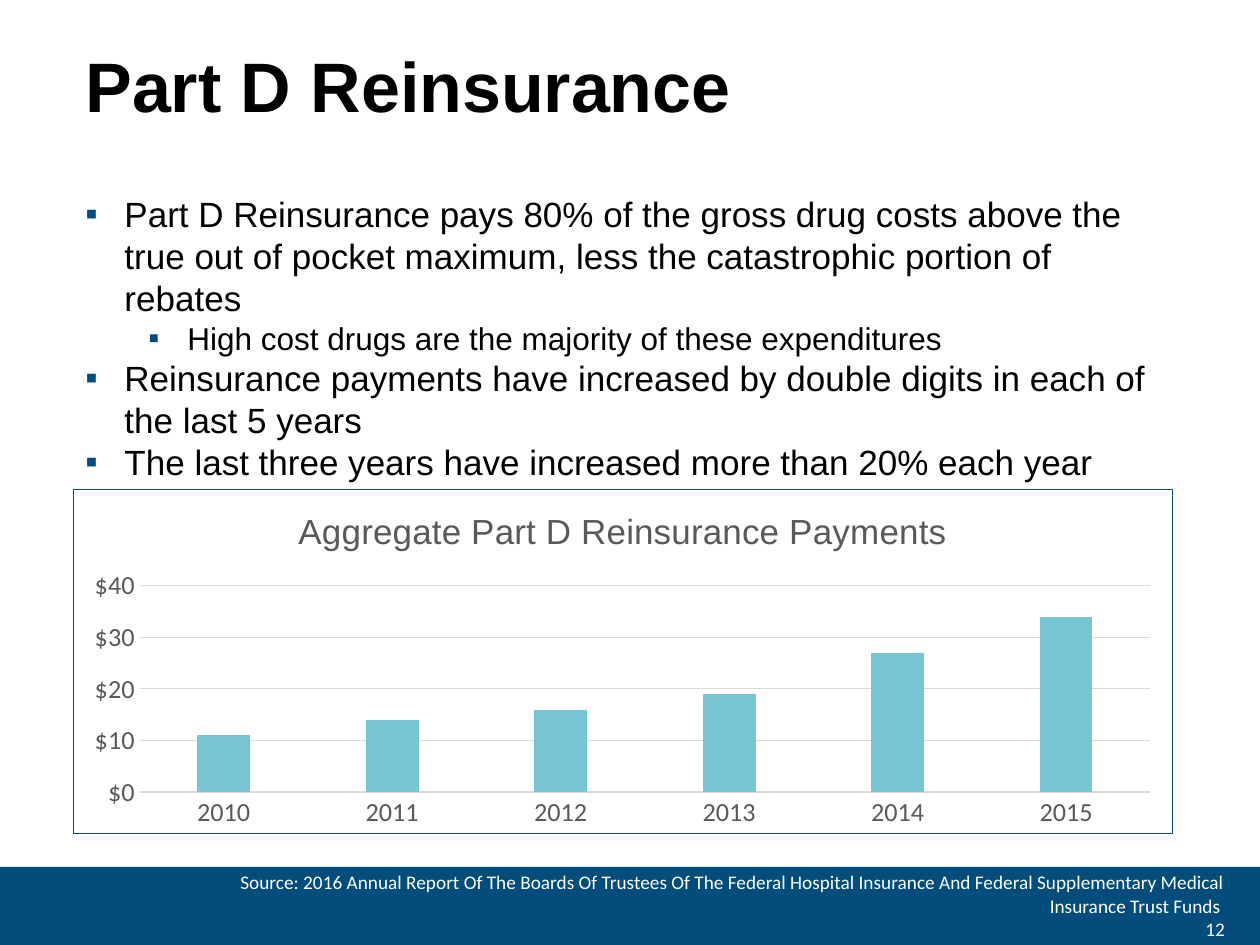
from dataclasses import dataclass

import pptx
import pptx.chart.data
import pptx.dml.color
import pptx.enum.chart
import pptx.enum.shapes
import pptx.enum.text
import pptx.oxml
import pptx.oxml.ns
import pptx.util
from pptx.util import Inches

COLORS = {"navy": "024D7C", "teal": "77C4D5", "black": "000000",
          "white": "FFFFFF", "gray": "595959", "rule": "D9D9D9"}
LEFT, WIDTH = 0.58, 8.73


@dataclass
class Line:
    text: str
    size: float
    level: int = 0


TITLE = [Line("Part D Reinsurance", 40)]
POINTS = [
    Line("Part D Reinsurance pays 80% of the gross drug costs above the true out of pocket "
         "maximum, less the catastrophic portion of rebates", 20),
    Line("High cost drugs are the majority of these expenditures", 18, 1),
    Line("Reinsurance payments have increased by double digits in each of the last 5 years", 20),
    Line("The last three years have increased more than 20% each year", 20),
]
FOOTER = [
    Line("Source: 2016 Annual Report Of The Boards Of Trustees Of The Federal Hospital Insurance "
         "And Federal Supplementary Medical Insurance Trust Funds ", 11),
    Line("12", 11),
]
PAYMENTS = {"2010": 11, "2011": 14, "2012": 16, "2013": 19, "2014": 27, "2015": 34}


def rgb(name: str) -> pptx.dml.color.RGBColor:
    return pptx.dml.color.RGBColor.from_string(COLORS[name])


def style_font(font, face: str, size: float, color: str, bold: bool = False) -> None:
    font.name, font.size, font.bold = face, pptx.util.Pt(size), bold
    font.color.rgb = rgb(color)


def add_bullet(paragraph, level: int) -> None:
    paragraph.level = level
    properties = paragraph._p.get_or_add_pPr()
    properties.set("marL", str(Inches(0.31 + 0.5 * level)))
    properties.set("indent", str(Inches(-0.31)))
    for element in (f'<a:buClr {{}}><a:srgbClr val="{COLORS["navy"]}"/></a:buClr>',
                    '<a:buFont {} typeface="Arial"/>', '<a:buChar {} char="▪"/>'):
        properties.append(pptx.oxml.parse_xml(element.format(pptx.oxml.ns.nsdecls("a"))))


def add_text(slide, box: tuple, lines: list[Line], face: str, color: str, anchor: str = "TOP",
             align: str = "LEFT", spacing: float = 1.0, bold: bool = False,
             bulleted: bool = False) -> None:
    frame = slide.shapes.add_textbox(*map(Inches, box)).text_frame
    frame.word_wrap = True
    frame.vertical_anchor = pptx.enum.text.MSO_ANCHOR[anchor]
    frame.text = "\n".join(line.text for line in lines)
    for paragraph, line in zip(frame.paragraphs, lines):
        paragraph.alignment = pptx.enum.text.PP_ALIGN[align]
        paragraph.line_spacing = spacing
        if bulleted:
            add_bullet(paragraph, line.level)
        style_font(paragraph.runs[0].font, face, line.size, color, bold)


def add_footer_band(slide) -> None:
    band = slide.shapes.add_shape(pptx.enum.shapes.MSO_SHAPE.RECTANGLE,
                                  Inches(0), Inches(6.88), Inches(10), Inches(0.65))
    band.shadow.inherit = False
    band.fill.solid()
    band.fill.fore_color.rgb = rgb("navy")
    band.line.fill.background()


def style_rule(line) -> None:
    line.color.rgb = rgb("rule")
    line.width = pptx.util.Pt(0.75)


def frame_chart(chart) -> None:
    border = pptx.oxml.parse_xml(
        f'<c:spPr {pptx.oxml.ns.nsdecls("c", "a")}><a:noFill/><a:ln w="9525"><a:solidFill>'
        f'<a:srgbClr val="{COLORS["navy"]}"/></a:solidFill></a:ln></c:spPr>')
    chart._chartSpace.chart.addnext(border)
    plot_area = chart._chartSpace.chart.plotArea
    for old in plot_area.findall(pptx.oxml.ns.qn("c:layout")):
        plot_area.remove(old)
    places = {"x": 0.06, "y": 0.28, "w": 0.92, "h": 0.6}
    modes = '<c:layoutTarget val="inner"/><c:xMode val="edge"/><c:yMode val="edge"/>'
    sizes = "".join(f'<c:{key} val="{value}"/>' for key, value in places.items())
    plot_area.insert(0, pptx.oxml.parse_xml(
        f'<c:layout {pptx.oxml.ns.nsdecls("c")}><c:manualLayout>{modes}{sizes}'
        '</c:manualLayout></c:layout>'))


def add_payments_chart(slide) -> None:
    data = pptx.chart.data.CategoryChartData()
    data.categories = list(PAYMENTS)
    data.add_series("Series 1", list(PAYMENTS.values()))
    chart = slide.shapes.add_chart(
        pptx.enum.chart.XL_CHART_TYPE.COLUMN_CLUSTERED,
        Inches(LEFT), Inches(3.88), Inches(WIDTH), Inches(2.74), data).chart
    style_font(chart.font, "Calibri", 10, "black")
    chart.has_legend = False
    chart.has_title = True
    heading = chart.chart_title.text_frame
    heading.text = "Aggregate Part D Reinsurance Payments"
    style_font(heading.paragraphs[0].runs[0].font, "Arial", 20, "gray")
    chart.chart_title.include_in_layout = False

    columns = chart.plots[0]
    columns.gap_width, columns.overlap, columns.vary_by_categories = 219, -27, False
    columns.series[0].format.fill.solid()
    columns.series[0].format.fill.fore_color.rgb = rgb("teal")

    years, dollars = chart.category_axis, chart.value_axis
    for axis in (years, dollars):
        axis.major_tick_mark = axis.minor_tick_mark = pptx.enum.chart.XL_TICK_MARK.NONE
        style_font(axis.tick_labels.font, "Calibri", 15, "gray")
    style_rule(years.format.line)
    dollars.format.line.fill.background()
    style_rule(dollars.major_gridlines.format.line)
    dollars.minimum_scale, dollars.maximum_scale, dollars.major_unit = 0, 40, 10
    dollars.tick_labels.number_format = '"$"#,##0'
    dollars.tick_labels.number_format_is_linked = False
    frame_chart(chart)


def main() -> None:
    deck = pptx.Presentation()
    deck.slide_width, deck.slide_height = Inches(10), Inches(7.5)
    slide = deck.slides.add_slide(deck.slide_layouts[6])
    add_footer_band(slide)
    add_text(slide, (LEFT, 0.36, WIDTH, 0.81), TITLE, "Arial", "black",
             spacing=0.9, bold=True)
    add_text(slide, (1.39, 7.04, 8.43, 0.29), FOOTER, "Calibri", "white",
             anchor="MIDDLE", align="RIGHT")
    add_payments_chart(slide)
    add_text(slide, (LEFT, 1.48, WIDTH, 2.42), POINTS, "Arial", "black", bulleted=True)
    deck.save("out.pptx")


if __name__ == "__main__":
    main()
